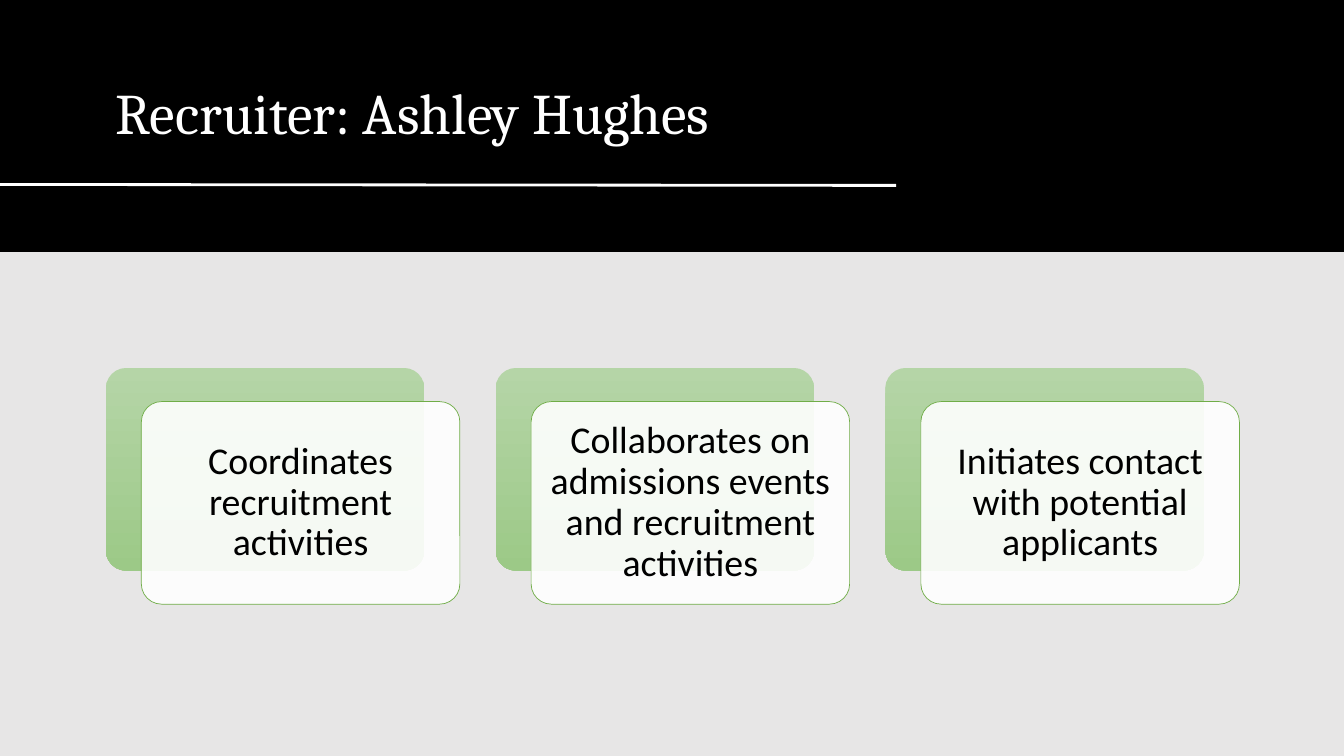
import dataclasses

import lxml.etree
import pptx
import pptx.dml.color
import pptx.enum.shapes
import pptx.enum.text
import pptx.oxml.ns
import pptx.util


@dataclasses.dataclass(frozen=True)
class Theme:
    background: str = "E7E6E6"
    banner: str = "000000"
    heading: str = "FFFFFF"
    body: str = "000000"
    card: str = "FFFFFF"
    card_edge: str = "70AD47"
    backing: tuple = ("B5D5A7", "9CC987")
    card_opacity: int = 90
    heading_font: str = "Cambria"
    body_font: str = "Calibri"
    heading_size: int = 41
    body_size: int = 27


def rgb(value):
    return pptx.dml.color.RGBColor.from_string(value)


class RecruiterSlide:
    def __init__(self, deck, theme):
        self.theme = theme
        self.width, self.height = deck.slide_width, deck.slide_height
        self.slide = deck.slides.add_slide(deck.slide_layouts[6])
        self.slide.background.fill.solid()
        self.slide.background.fill.fore_color.rgb = rgb(theme.background)

    def place(self, left, top, width, height):
        return (
            round(self.width * left / 100),
            round(self.height * top / 100),
            round(self.width * width / 100),
            round(self.height * height / 100),
        )

    def panel(self, area, preset):
        panel = self.slide.shapes.add_shape(preset, *self.place(*area))
        panel.shadow.inherit = False
        panel.line.fill.background()
        return panel

    def rounded_panel(self, area):
        panel = self.panel(area, pptx.enum.shapes.MSO_SHAPE.ROUNDED_RECTANGLE)
        panel.adjustments[0] = 0.1
        return panel

    def banner(self, area):
        banner = self.panel(area, pptx.enum.shapes.MSO_SHAPE.RECTANGLE)
        banner.fill.solid()
        banner.fill.fore_color.rgb = rgb(self.theme.banner)

    def set_wording(self, holder, wording, font, size, color):
        frame = holder.text_frame
        frame.word_wrap = True
        frame.vertical_anchor = pptx.enum.text.MSO_ANCHOR.MIDDLE
        frame.text = wording
        paragraph = frame.paragraphs[0]
        paragraph.line_spacing = 0.9
        paragraph.font.name = font
        paragraph.font.size = pptx.util.Pt(size)
        paragraph.font.color.rgb = rgb(color)
        return frame

    def heading(self, area, wording):
        theme = self.theme
        heading = self.slide.shapes.add_textbox(*self.place(*area))
        self.set_wording(heading, wording, theme.heading_font, theme.heading_size, theme.heading)

    def rule(self, left, top, right, bottom):
        rule = self.slide.shapes.add_connector(
            pptx.enum.shapes.MSO_CONNECTOR.STRAIGHT, *self.place(left, top, right, bottom)
        )
        rule.line.color.rgb = rgb(self.theme.heading)
        rule.line.width = pptx.util.Pt(2)
        lxml.etree.SubElement(rule._element.spPr, pptx.oxml.ns.qn("a:effectLst"))

    def backing(self, area):
        backing = self.rounded_panel(area)
        backing.fill.gradient()
        backing.fill.gradient_angle = 270
        for stop, shade in zip(backing.fill.gradient_stops, self.theme.backing):
            stop.color.rgb = rgb(shade)

    def duty(self, area, wording):
        theme = self.theme
        card = self.rounded_panel(area)
        card.fill.solid()
        card.fill.fore_color.rgb = rgb(theme.card)
        tint = card._element.spPr.find(".//" + pptx.oxml.ns.qn("a:srgbClr"))
        opacity = lxml.etree.SubElement(tint, pptx.oxml.ns.qn("a:alpha"))
        opacity.set("val", str(theme.card_opacity * 1000))
        card.line.color.rgb = rgb(theme.card_edge)
        card.line.width = pptx.util.Pt(0.5)
        frame = self.set_wording(card, wording, theme.body_font, theme.body_size, theme.body)
        frame.paragraphs[0].alignment = pptx.enum.text.PP_ALIGN.CENTER
        inset = pptx.util.Inches(0.11)
        frame.margin_left = frame.margin_right = inset
        frame.margin_top = frame.margin_bottom = inset


def main():
    deck = pptx.Presentation()
    deck.slide_width = pptx.util.Inches(13.33)
    deck.slide_height = pptx.util.Inches(7.5)
    recruiter = RecruiterSlide(deck, Theme())

    recruiter.banner((0, 0, 100, 33.33))
    recruiter.heading((7.88, 6.27, 58.8, 18.13), "Recruiter: Ashley Hughes")
    recruiter.rule(0, 24.4, 66.67, 24.53)

    duties = (
        "Coordinates recruitment activities",
        "Collaborates on admissions events and recruitment activities",
        "Initiates contact with potential applicants",
    )
    first_left, top, pitch = 7.88, 48.67, 29
    card_width, card_height = 23.7, 26.8
    shift_right, shift_down = 2.64, 4.45
    for column, wording in enumerate(duties):
        left = first_left + column * pitch
        recruiter.backing((left, top, card_width, card_height))
        recruiter.duty((left + shift_right, top + shift_down, card_width, card_height), wording)

    deck.save("out.pptx")


if __name__ == "__main__":
    main()
